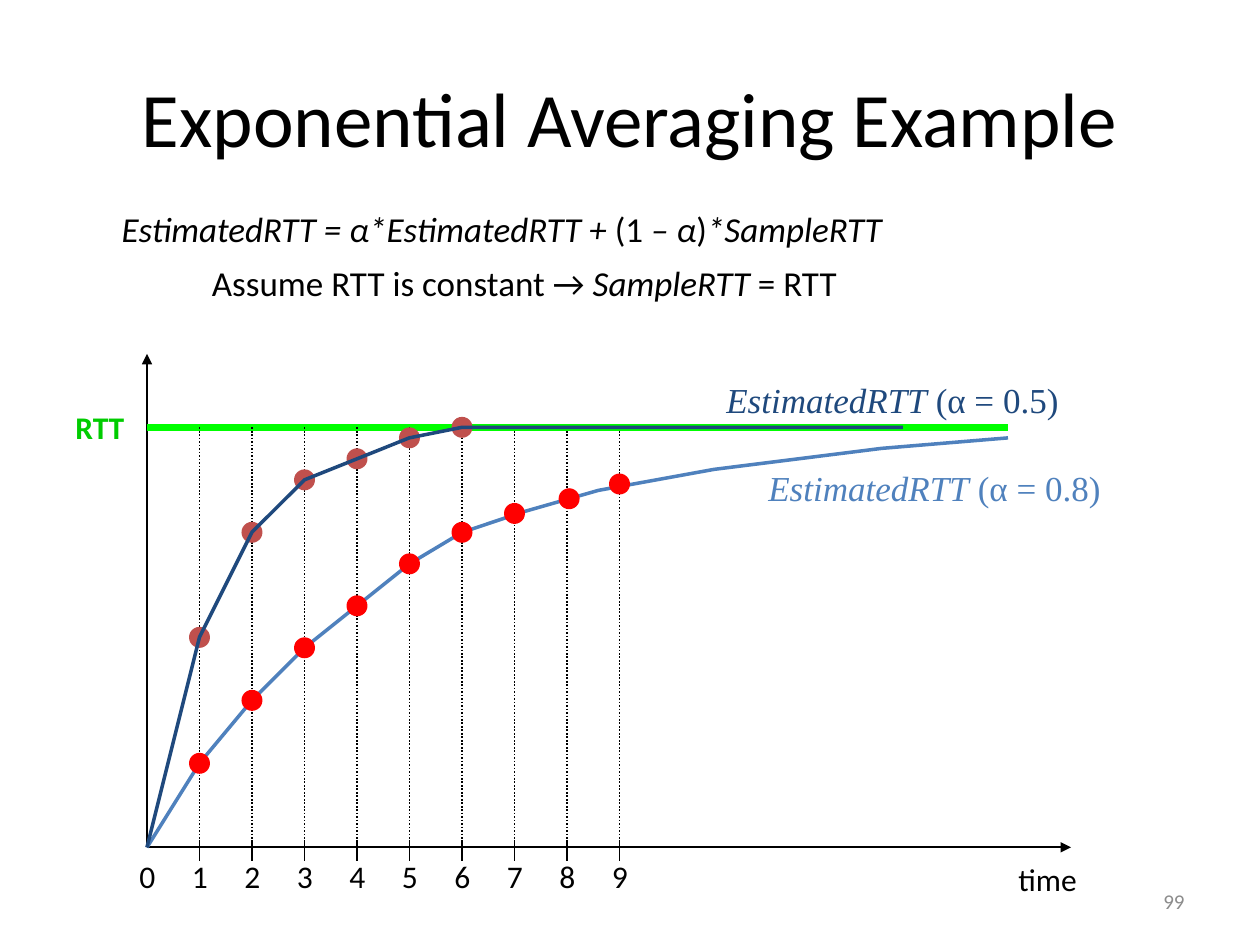
from lxml.etree import SubElement
from pptx import Presentation
from pptx.dml.color import RGBColor
from pptx.enum.dml import MSO_LINE_DASH_STYLE as DASH
from pptx.enum.shapes import MSO_CONNECTOR as CONNECTOR, MSO_SHAPE as SHAPE
from pptx.enum.text import MSO_ANCHOR as ANCHOR, MSO_AUTO_SIZE as AUTO_SIZE, PP_ALIGN as ALIGN
from pptx.oxml.ns import qn
from pptx.util import Pt

PX = 7620  # EMU per px, 120 px to the inch
COLORS = {
    "black": "000000", "rtt_line": "00FF00", "rtt_label": "00CC00",
    "slow_curve": "4F81BD", "slow_dot": "FF0000",
    "fast_curve": "1F497D", "fast_dot": "C0504D", "number": "8C8C8C",
}
COLORS = {name: RGBColor.from_string(value) for name, value in COLORS.items()}

ORIGIN_X, ORIGIN_Y, RTT_Y, STEP = 140, 807, 407, 50
SAMPLES = range(1, 10)


def add_line(shapes, start, end, color="black", width=1, dash=None, arrow=False):
    connector = shapes.add_connector(
        CONNECTOR.STRAIGHT, *(value * PX for value in (*start, *end)))
    connector.line.color.rgb = COLORS[color]
    connector.line.width = Pt(width)
    if dash:
        connector.line.dash_style = dash
    properties = connector._element.spPr
    if arrow:
        SubElement(properties.find(qn("a:ln")), qn("a:tailEnd"), type="triangle")
    SubElement(properties, qn("a:effectLst"))


def add_text(shapes, box, runs, size=18, color="black", font="Calibri", bold=False):
    """Add an unwrapped text box; runs are (text, italic) pairs."""
    shape = shapes.add_textbox(*(value * PX for value in box))
    frame = shape.text_frame
    frame.word_wrap = False
    frame.auto_size = AUTO_SIZE.SHAPE_TO_FIT_TEXT
    for text, italic in runs:
        run = frame.paragraphs[0].add_run()
        run.text = text
        run.font.name = font
        run.font.size = Pt(size)
        run.font.bold = bold
        run.font.italic = italic
        run.font.color.rgb = COLORS[color]
    return shape


presentation = Presentation()
presentation.slide_width, presentation.slide_height = 1200 * PX, 900 * PX
slide = presentation.slides.add_slide(presentation.slide_layouts[5])

# Title
title = slide.shapes.title
title.left, title.top, title.width, title.height = 60 * PX, 36 * PX, 1080 * PX, 150 * PX
title.text_frame.text = "Exponential Averaging Example"
title_font = title.text_frame.paragraphs[0].runs[0].font
title_font.name, title_font.size = "Calibri", Pt(44)
title_font.color.rgb = COLORS["black"]

# Axes and the constant RTT
add_line(slide.shapes, (ORIGIN_X, ORIGIN_Y), (ORIGIN_X, 337), arrow=True)
add_line(slide.shapes, (ORIGIN_X, ORIGIN_Y), (1020, ORIGIN_Y), arrow=True)
add_line(slide.shapes, (ORIGIN_X, RTT_Y), (960, RTT_Y), "rtt_line", 4)
add_text(slide.shapes, (60, 383, 82, 48), [("RTT", False)], color="rtt_label", bold=True)
add_text(slide.shapes, (958, 813, 80, 48), [("time", False)])

# Formula and assumption
add_text(slide.shapes, (104, 192, 886, 52), [
    ("EstimatedRTT = α*EstimatedRTT + ", True), ("(1", False), (" – α", True),
    (")", False), ("*SampleRTT", True)], size=20)
add_text(slide.shapes, (190, 243, 725, 52), [
    ("Assume RTT is constant → ", False), ("SampleRTT", True), (" = RTT", False)], size=20)

# Sample grid, ticks and tick labels
grid = slide.shapes.add_group_shape()
for sample in SAMPLES:
    x = ORIGIN_X + STEP * sample
    add_line(grid.shapes, (x, RTT_Y), (x, 817), dash=DASH.ROUND_DOT)
    add_line(slide.shapes, (x, 800), (x, 820))
for sample in (0, *SAMPLES):
    add_text(slide.shapes, (121 + STEP * sample, 810, 38, 43), [(str(sample), False)])

# Estimates for both values of α; the slow curve lies under its dots, the fast one over
slow_points = [
    (140, 807), (190, 727), (240, 667), (290, 617), (340, 577), (390, 537),
    (440, 507), (500, 487), (570, 467), (680, 447), (840, 427), (960, 417)]
slow_dots = slow_points[1:7] + [(490, 489), (542, 475), (590, 461)]
fast_points = [
    (140, 807), (190, 607), (240, 507), (290, 457), (340, 437), (390, 417),
    (440, 407), (860, 407)]
series = [
    ("slow", slow_points, slow_dots, " (α = 0.8)", (720, 438, 341, 52), ("curve", "dots")),
    ("fast", fast_points, fast_points[1:7], " (α = 0.5)", (680, 355, 341, 52), ("dots", "curve")),
]
for name, points, dots, alpha, label_box, layers in series:
    group = slide.shapes.add_group_shape()
    for layer in layers:
        if layer == "curve":
            builder = group.shapes.build_freeform(*points[0], scale=PX)
            builder.add_line_segments(points[1:], close=False)
            curve = builder.convert_to_shape()
            curve.shadow.inherit = False
            curve.fill.background()
            curve.line.color.rgb = COLORS[f"{name}_curve"]
            curve.line.width = Pt(2)
            continue
        for x, y in dots:
            dot = group.shapes.add_shape(
                SHAPE.OVAL, (x - 10) * PX, (y - 10) * PX, 20 * PX, 20 * PX)
            dot.shadow.inherit = False
            dot.fill.solid()
            dot.fill.fore_color.rgb = COLORS[f"{name}_dot"]
            dot.line.fill.background()
    add_text(group.shapes, label_box, [("EstimatedRTT", True), (alpha, False)],
             size=20, color=f"{name}_curve", font="Times New Roman")

# Slide number
number = add_text(slide.shapes, (860, 834, 280, 48), [("99", False)], size=12, color="number")
number.text_frame.auto_size = AUTO_SIZE.NONE
number.text_frame.word_wrap = True
number.text_frame.vertical_anchor = ANCHOR.MIDDLE
number.text_frame.paragraphs[0].alignment = ALIGN.RIGHT

presentation.save("out.pptx")
